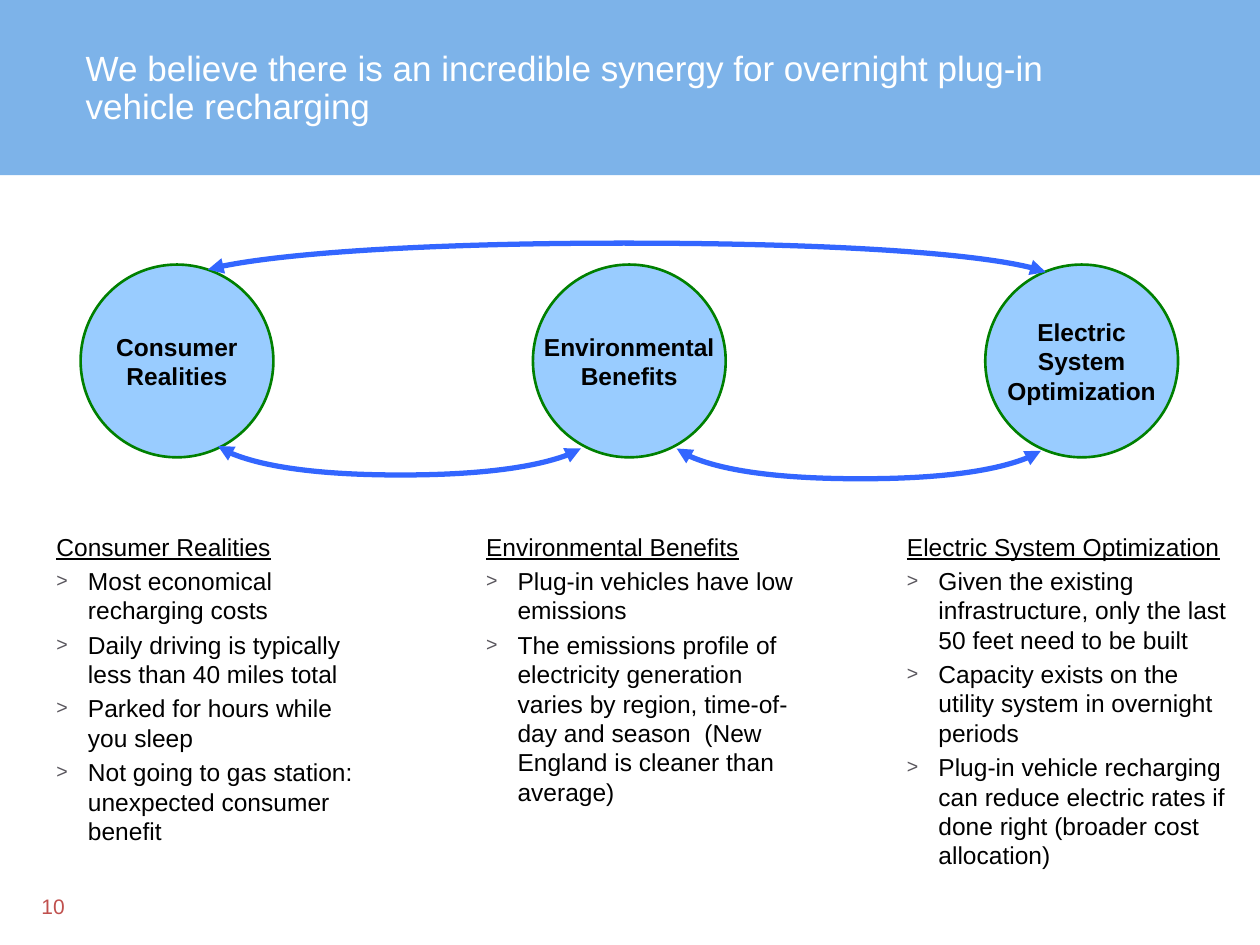
from lxml import etree
from pptx import Presentation
from pptx.dml.color import RGBColor
from pptx.enum.shapes import MSO_SHAPE as Shape
from pptx.enum.text import MSO_ANCHOR as Anchor, MSO_AUTO_SIZE as AutoSize, PP_ALIGN as Align
from pptx.oxml.ns import qn
from pptx.util import Inches, Pt


def color(value):
    return RGBColor.from_string(value)


def add_run(para, text, size, fill, bold=False, underline=False):
    span = para.add_run()
    span.text = text
    span.font.name = "Arial"
    span.font.size = Pt(size)
    span.font.color.rgb = color(fill)
    span.font.bold = bold
    span.font.underline = underline


deck = Presentation()
deck.slide_width, deck.slide_height = Inches(10), Inches(7.5)
page = deck.slides.add_slide(deck.slide_layouts[5])

# Title on a blue band
title = page.shapes.title
title.left, title.top = Inches(0.58), Inches(0.35)
title.width, title.height = Inches(8.49), Inches(0.75)
title.text_frame.auto_size = AutoSize.NONE
title.text_frame.vertical_anchor = Anchor.MIDDLE
title.text_frame.margin_bottom = Inches(0.08)
para = title.text_frame.paragraphs[0]
para.alignment = Align.LEFT
para.line_spacing = 0.9
add_run(para, "We believe there is an incredible synergy for overnight plug-in vehicle recharging",
        20, "FFFFFF")

band = page.shapes.add_shape(Shape.RECTANGLE, 0, 0, Inches(10), Inches(1.39))
band.shadow.inherit = False
band.fill.solid()
band.fill.fore_color.rgb = color("7DB3E9")
band.line.fill.background()
title.element.addprevious(band.element)  # behind the title

# Page number
box = page.shapes.add_textbox(Inches(0.23), Inches(7.04), Inches(2.08), Inches(0.18))
add_run(box.text_frame.paragraphs[0], "10", 12, "C0504D")

# Circles, evenly spaced
circle_labels = [["Consumer", "Realities"],
                 ["Environmental", "Benefits"],
                 ["Electric", "System", "Optimization"]]
for index, lines in enumerate(circle_labels):
    circle = page.shapes.add_shape(Shape.OVAL, Inches(0.64 + 3.59 * index), Inches(2.1),
                                   Inches(1.53), Inches(1.53))
    circle.shadow.inherit = False
    circle.fill.solid()
    circle.fill.fore_color.rgb = color("99CCFF")
    circle.line.color.rgb = color("008000")
    circle.line.width = Pt(1.5)
    frame = circle.text_frame
    frame.word_wrap = False
    frame.vertical_anchor = Anchor.MIDDLE
    for number, line in enumerate(lines):
        para = frame.add_paragraph() if number else frame.paragraphs[0]
        para.alignment = Align.CENTER
        add_run(para, line, 14, "000000", bold=True)

# Double-headed curves: a start point, then three control points per Bezier span
curves = [
    [(1.65, 2.14), (2.08, 2.02), (3.42, 1.93), (4.95, 1.93), (6.55, 1.93), (7.94, 2.02), (8.3, 2.16)],
    [(4.61, 3.56), (4.43, 3.68), (3.84, 3.77), (3.18, 3.77), (2.49, 3.77), (1.89, 3.67), (1.73, 3.54)],
    [(8.26, 3.58), (8.07, 3.71), (7.49, 3.8), (6.83, 3.8), (6.13, 3.8), (5.53, 3.7), (5.37, 3.56)],
]
for controls in curves:
    start, *others = [(Inches(x), Inches(y)) for x, y in controls]
    builder = page.shapes.build_freeform(*start)
    builder.add_line_segments(others, close=False)
    curve = builder.convert_to_shape()
    curve.shadow.inherit = False
    curve.fill.background()
    curve.line.color.rgb = color("3366FF")
    curve.line.width = Pt(3)
    # Turn every three straight segments into one Bezier span
    segments = list(curve.element.iter(qn("a:lnTo")))
    for first in range(0, len(segments), 3):
        span = etree.SubElement(segments[first].getparent(), qn("a:cubicBezTo"))
        for segment in segments[first:first + 3]:
            span.append(segment[0])
            segment.getparent().remove(segment)
    outline = curve.element.spPr.find(qn("a:ln"))
    for end in ("a:headEnd", "a:tailEnd"):
        etree.SubElement(outline, qn(end), type="triangle")

# Bulleted columns
columns = [
    (0.35, 1.57, "Consumer Realities",
     ["Most economical recharging costs",
      "Daily driving is typically less than 40 miles total",
      "Parked for hours while you sleep",
      "Not going to gas station: unexpected consumer benefit"]),
    (3.76, 2.18, "Environmental Benefits",
     ["Plug-in vehicles have low emissions",
      "The emissions profile of electricity generation varies by region, "
      "time-of-day and season  (New England is cleaner than average)"]),
    (7.1, 1.57, "Electric System Optimization",
     ["Given the existing infrastructure, only the last 50 feet need to be built",
      "Capacity exists on the utility system in overnight periods",
      "Plug-in vehicle recharging can reduce electric rates if done right "
      "(broader cost allocation)"]),
]
for left, height, heading, bullets in columns:
    box = page.shapes.add_textbox(Inches(left), Inches(4.17), Inches(2.74), Inches(height))
    frame = box.text_frame
    frame.word_wrap = True
    add_run(frame.paragraphs[0], heading, 14, "000000", underline=True)
    for bullet in bullets:
        para = frame.add_paragraph()
        para.space_before = Pt(2.8)
        props = para._p.get_or_add_pPr()
        props.set("marL", str(Inches(0.25)))
        props.set("indent", str(-Inches(0.25)))
        tint = etree.SubElement(props, qn("a:buClr"))
        etree.SubElement(tint, qn("a:srgbClr"), val="59565D")
        etree.SubElement(props, qn("a:buSzPct"), val="80000")
        etree.SubElement(props, qn("a:buFont"), typeface="Arial")
        etree.SubElement(props, qn("a:buChar"), char=">")
        add_run(para, bullet, 14, "000000")

deck.save("out.pptx")
